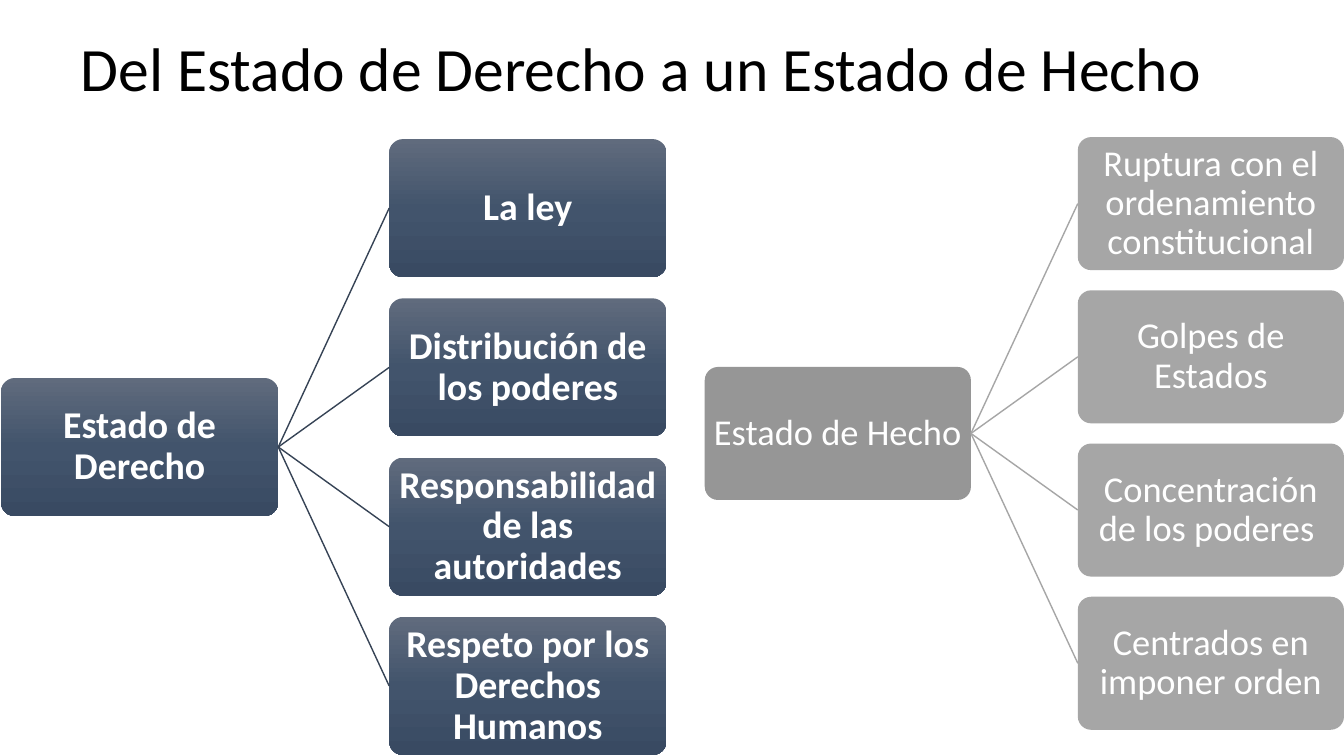
from copy import deepcopy

from lxml import etree
from pptx import Presentation
from pptx.dml.color import RGBColor
from pptx.enum.shapes import MSO_CONNECTOR, MSO_SHAPE
from pptx.enum.text import MSO_ANCHOR, MSO_AUTO_SIZE, PP_ALIGN
from pptx.oxml.ns import qn
from pptx.util import Inches, Pt

STRAIGHT = MSO_CONNECTOR.STRAIGHT
ROUNDED = MSO_SHAPE.ROUNDED_RECTANGLE
MIDDLE = MSO_ANCHOR.MIDDLE
NO_AUTOFIT = MSO_AUTO_SIZE.NONE
LEFT, CENTER = PP_ALIGN.LEFT, PP_ALIGN.CENTER
RIGHT_SIDE, LEFT_SIDE = 3, 1
FONT = "Calibri"
TITLE_ONLY = 5

NAVY_GRADIENT = ["606B7D", "42546C", "394A62"]

# Each tree: a root box on the left, its branches stacked on the right
TREES = [
    {
        "root": "Estado de Derecho",
        "branches": [
            "La ley",
            "Distribución de los poderes",
            "Responsabilidad de las autoridades",
            "Respeto por los Derechos Humanos",
        ],
        "root_at": (0.01, 3.75), "branch_at": (3.86, 1.38),
        "size": (2.75, 1.37), "step": 1.58,
        "root_fill": NAVY_GRADIENT, "branch_fill": NAVY_GRADIENT,
        "line": "364355", "points": 27, "bold": True,
    },
    {
        "root": "Estado de Hecho",
        "branches": [
            "Ruptura con el ordenamiento constitucional",
            "Golpes de Estados",
            "Concentración de los poderes ",
            "Centrados en imponer orden",
        ],
        "root_at": (6.99, 3.64), "branch_at": (10.69, 1.36),
        "size": (2.64, 1.32), "step": 1.52,
        "root_fill": ["969696"], "branch_fill": ["A6A6A6"],
        "line": "A6A6A6", "points": 26, "bold": False,
    },
]


def color(hex_value):
    return RGBColor.from_string(hex_value)


def format_text(frame, text, points, hex_value, align, bold=False):
    frame.text = text
    frame.word_wrap = True
    frame.auto_size = NO_AUTOFIT
    frame.vertical_anchor = MIDDLE
    para = frame.paragraphs[0]
    para.alignment = align
    para.line_spacing = 0.9
    font = para.runs[0].font
    font.name, font.size, font.bold = FONT, Pt(points), bold
    font.color.rgb = color(hex_value)


def fill_box(box, hex_values):
    """One colour gives a solid fill, three a gradient from top to bottom."""
    if len(hex_values) == 1:
        box.fill.solid()
        box.fill.fore_color.rgb = color(hex_values[0])
        return
    box.fill.gradient()
    box.fill.gradient_angle = 270
    stop_list = box._element.spPr.find(".//" + qn("a:gsLst"))
    stop_list.append(deepcopy(stop_list[-1]))
    for index, stop in enumerate(box.fill.gradient_stops):
        stop.position = index / 2
        stop.color.rgb = color(hex_values[index])


def add_box(slide, tree, text, at, hex_values):
    lengths = [Inches(value) for value in (*at, *tree["size"])]
    box = slide.shapes.add_shape(ROUNDED, *lengths)
    box.adjustments[0] = 0.1
    box.shadow.inherit = False
    box.line.fill.background()
    fill_box(box, hex_values)
    frame = box.text_frame
    frame.margin_left = frame.margin_right = Inches(0.05)
    frame.margin_top = frame.margin_bottom = Inches(0.05)
    format_text(frame, text, tree["points"], "FFFFFF", CENTER, tree["bold"])
    return box


def add_link(slide, root, branch, hex_value):
    link = slide.shapes.add_connector(STRAIGHT, 0, 0, 0, 0)
    link.begin_connect(root, RIGHT_SIDE)
    link.end_connect(branch, LEFT_SIDE)
    link.line.color.rgb = color(hex_value)
    link.line.width = Pt(1)
    etree.SubElement(link._element.spPr, qn("a:effectLst"))


def add_tree(slide, tree):
    root = add_box(slide, tree, tree["root"], tree["root_at"], tree["root_fill"])
    left, top = tree["branch_at"]
    for index, text in enumerate(tree["branches"]):
        at = (left, top + index * tree["step"])
        branch = add_box(slide, tree, text, at, tree["branch_fill"])
        add_link(slide, root, branch, tree["line"])


def set_title(slide, text):
    title = slide.shapes.title
    title.left, title.top = Inches(0.7), Inches(0.16)
    title.width, title.height = Inches(12.3), Inches(1.11)
    format_text(title.text_frame, text, 44, "000000", LEFT)


def main():
    deck = Presentation()
    deck.slide_width, deck.slide_height = Inches(13.33), Inches(7.5)
    slide = deck.slides.add_slide(deck.slide_layouts[TITLE_ONLY])
    set_title(slide, "Del Estado de Derecho a un Estado de Hecho")
    for tree in TREES:
        add_tree(slide, tree)
    deck.save("out.pptx")


if __name__ == "__main__":
    main()
